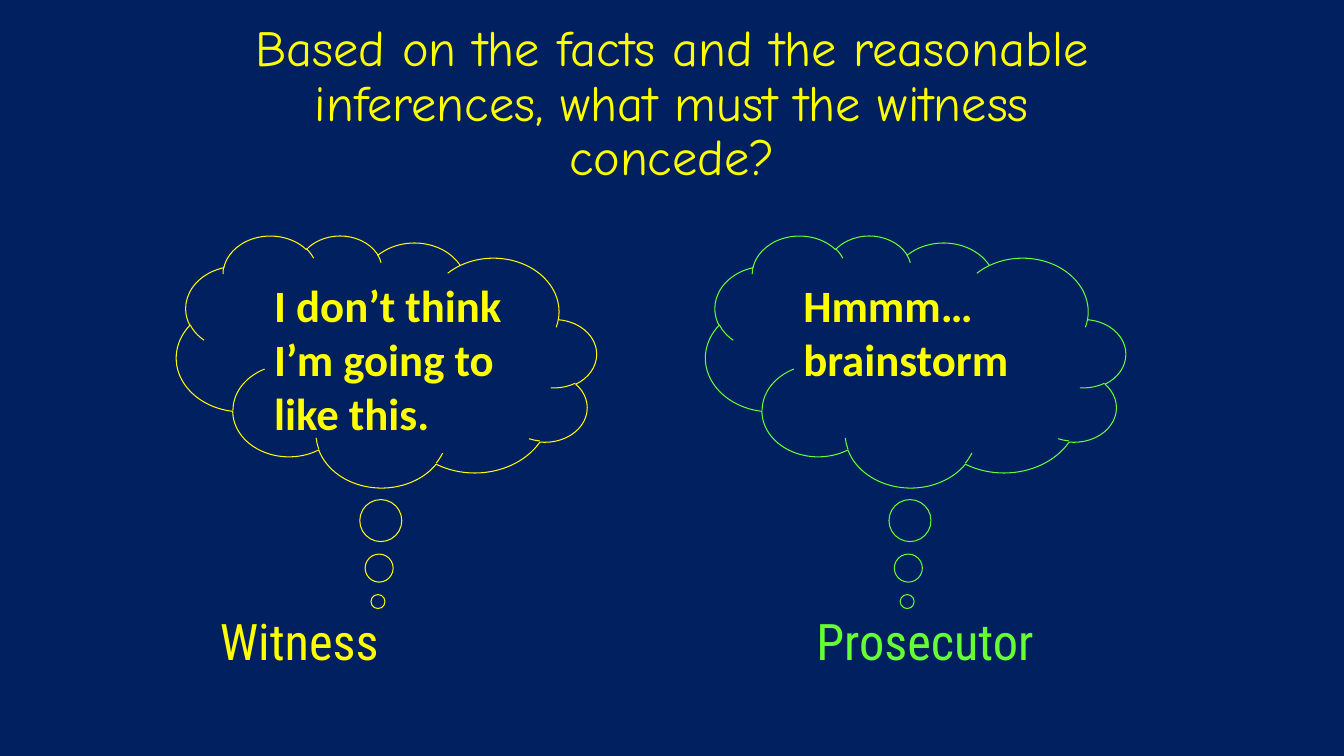
from lxml.etree import SubElement
from pptx import Presentation
from pptx.dml.color import RGBColor
from pptx.enum.shapes import MSO_SHAPE
from pptx.enum.text import MSO_ANCHOR, PP_ALIGN
from pptx.oxml.ns import qn
from pptx.util import Emu, Pt

EMU_PER_PX = 9525
NAVY, YELLOW, GREEN = "002060", "FFFF00", "66FF33"


def px(length):
    """Turn whole pixels into EMU."""
    return Emu(length * EMU_PER_PX)


def color(hex_string):
    """Turn a hex string into a colour."""
    return RGBColor.from_string(hex_string)


def add_run(paragraph, text, font_name, size, hex_color, bold=False):
    """Add one formatted run and return it."""
    run = paragraph.add_run()
    run.text = text
    font = run.font
    font.name, font.size, font.bold = font_name, Pt(size), bold
    font.color.rgb = color(hex_color)
    return run


def outline_run(run, hex_color, width):
    """Put a solid outline around the letters of a run."""
    properties = run.font._element
    line = SubElement(properties, qn("a:ln"), w=str(Pt(width)))
    fill = SubElement(line, qn("a:solidFill"))
    SubElement(fill, qn("a:srgbClr"), val=hex_color)
    properties.insert(0, line)


def add_title(slide, text, left, top, width, height):
    """Add the centred question at the top."""
    frame = slide.shapes.add_textbox(px(left), px(top), px(width), px(height)).text_frame
    frame.word_wrap = True
    frame.vertical_anchor = MSO_ANCHOR.MIDDLE
    paragraph = frame.paragraphs[0]
    paragraph.alignment = PP_ALIGN.CENTER
    paragraph.line_spacing = 0.9
    add_run(paragraph, text, "Comic Neue", 36, YELLOW)


def add_speaker(slide, name, hex_color, left, top, width, height):
    """Add the name of a speaker below a cloud."""
    frame = slide.shapes.add_textbox(px(left), px(top), px(width), px(height)).text_frame
    frame.word_wrap = False
    run = add_run(frame.paragraphs[0], name, "Roboto Condensed", 36, hex_color)
    outline_run(run, YELLOW, 1.5)


def add_thought(slide, lines, hex_color, left):
    """Add a mirrored thought cloud with one paragraph per line."""
    shape = slide.shapes.add_shape(MSO_SHAPE.CLOUD_CALLOUT, px(left), px(224), px(400), px(240))
    shape.shadow.inherit = False
    shape._element.spPr.xfrm.set("flipH", "1")
    shape.adjustments[0] = 0.02
    shape.adjustments[1] = 0.954
    shape.fill.solid()
    shape.fill.fore_color.rgb = color(NAVY)
    shape.line.color.rgb = color(hex_color)
    shape.line.width = Pt(0.75)
    frame = shape.text_frame
    frame.word_wrap = True
    frame.vertical_anchor = MSO_ANCHOR.TOP
    for index, text in enumerate(lines):
        paragraph = frame.add_paragraph() if index else frame.paragraphs[0]
        paragraph.alignment = PP_ALIGN.LEFT
        add_run(paragraph, text, "Calibri", 32, YELLOW, bold=True)


def main():
    """Build and save the slide."""
    presentation = Presentation()
    presentation.slide_width, presentation.slide_height = px(1280), px(720)
    slide = presentation.slides.add_slide(presentation.slide_layouts[6])
    slide.background.fill.solid()
    slide.background.fill.fore_color.rgb = color(NAVY)
    question = "Based on the facts and the reasonable inferences, what must the witness concede?"
    add_title(slide, question, 208, 40, 864, 120)
    add_speaker(slide, "Witness", YELLOW, 200, 576, 280, 96)
    add_speaker(slide, "Prosecutor", GREEN, 768, 576, 296, 112)
    add_thought(slide, ["Hmmm…", "brainstorm"], GREEN, 672)
    add_thought(slide, ["I don’t think I’m going to like this."], YELLOW, 168)
    presentation.save("out.pptx")


if __name__ == "__main__":
    main()
